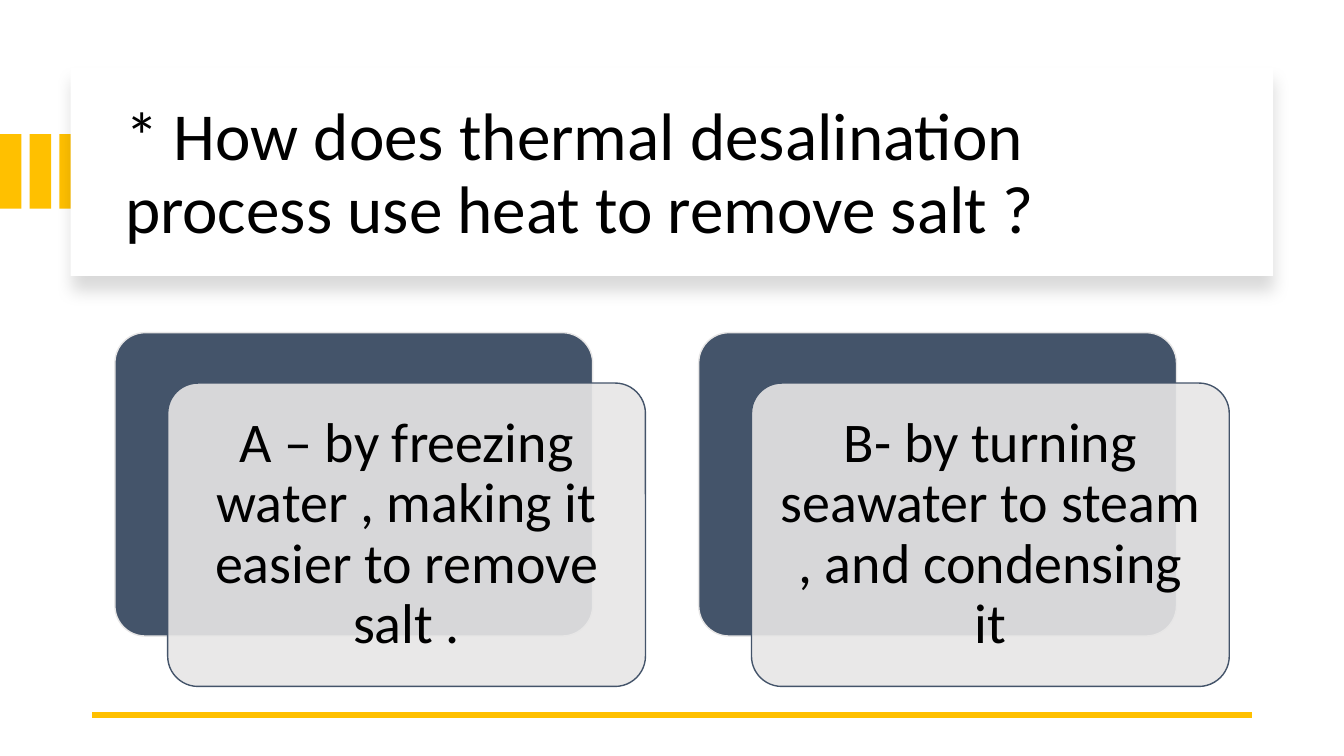
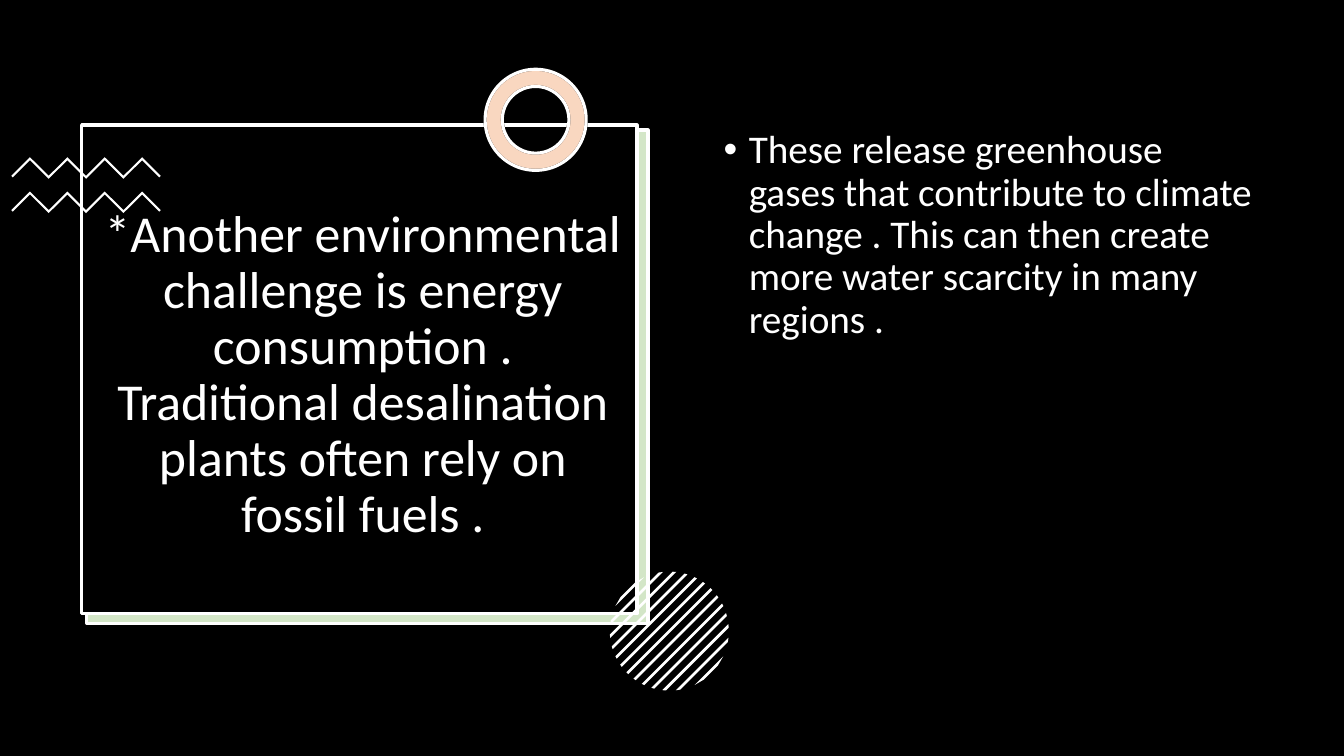
import math
from dataclasses import dataclass
from typing import Any, Optional

import pptx
import pptx.dml.color
import pptx.enum.shapes
import pptx.enum.text
import pptx.oxml.ns
import pptx.oxml.xmlchemy
import pptx.util

Pt = pptx.util.Pt
Preset = pptx.enum.shapes.MSO_SHAPE
Align = pptx.enum.text.PP_ALIGN
Anchor = pptx.enum.text.MSO_ANCHOR

FONT = "Calibri"
BLACK, WHITE = "000000", "FFFFFF"
GOLD, NAVY, GREY = "FFC000", "44546A", "E7E6E6"
GREEN, ORANGE = "70AD47", "ED7D31"
LINE_SPACING = 0.9
TITLE_ONLY = 5


@dataclass(frozen=True)
class Box:
    left: float
    top: float
    width: float
    height: float

    def lengths(self) -> list[int]:
        return [Pt(value) for value in (self.left, self.top, self.width, self.height)]


@dataclass(frozen=True)
class Look:
    fill: str
    line: Optional[str] = None
    line_width: float = 0
    opacity: int = 100


@dataclass(frozen=True)
class TextStyle:
    size: float
    color: str
    align: Any = Align.LEFT
    anchor: Any = Anchor.MIDDLE
    inset_x: float = 7.2
    inset_y: float = 3.6


def color(hex_value: str) -> pptx.dml.color.RGBColor:
    return pptx.dml.color.RGBColor.from_string(hex_value)


def add_child(parent: Any, tag: str, **attributes: Any) -> Any:
    child = pptx.oxml.xmlchemy.OxmlElement(tag)
    for name, value in attributes.items():
        child.set(name, str(value))
    parent.append(child)
    return child


def apply_look(shape: Any, look: Look) -> None:
    shape.shadow.inherit = False
    shape.fill.solid()
    shape.fill.fore_color.rgb = color(look.fill)
    if look.opacity < 100:
        fill_color = shape.element.spPr.find(".//" + pptx.oxml.ns.qn("a:srgbClr"))
        add_child(fill_color, "a:alpha", val=look.opacity * 1000)
    if look.line is None:
        shape.line.fill.background()
    else:
        shape.line.color.rgb = color(look.line)
        shape.line.width = Pt(look.line_width)


def add_preset(slide: Any, preset: Any, box: Box, look: Look,
               adjustment: Optional[float] = None) -> Any:
    shape = slide.shapes.add_shape(preset, *box.lengths())
    if adjustment is not None:
        shape.adjustments[0] = adjustment
    apply_look(shape, look)
    return shape


def add_outline(slide: Any, points: list[tuple[float, float]], look: Look) -> None:
    corners = [(Pt(x), Pt(y)) for x, y in points]
    builder = slide.shapes.build_freeform(*corners[0])
    builder.add_line_segments(corners[1:], close=True)
    apply_look(builder.convert_to_shape(), look)


def write_text(shape: Any, text: str, style: TextStyle) -> Any:
    """Put one formatted paragraph into the shape and return it."""
    frame = shape.text_frame
    frame.text = text
    frame.word_wrap = True
    frame.auto_size = pptx.enum.text.MSO_AUTO_SIZE.NONE
    frame.vertical_anchor = style.anchor
    frame.margin_left = frame.margin_right = Pt(style.inset_x)
    frame.margin_top = frame.margin_bottom = Pt(style.inset_y)
    para = frame.paragraphs[0]
    para.alignment = style.align
    para.line_spacing = LINE_SPACING
    for span in para.runs:
        span.font.name = FONT
        span.font.size = Pt(style.size)
        span.font.color.rgb = color(style.color)
    return para


def set_title(slide: Any, text: str, box: Box, style: TextStyle) -> None:
    """Fill the title placeholder and bring it in front of the shapes so far."""
    title = slide.shapes.title
    title.left, title.top, title.width, title.height = box.lengths()
    write_text(title, text, style)
    title.element.getparent().append(title.element)


def add_soft_shadow(shape: Any) -> None:
    effects = shape.element.spPr.find(pptx.oxml.ns.qn("a:effectLst"))
    shadow = add_child(effects, "a:outerShdw", blurRad=Pt(11), dist=Pt(10),
                       dir=90 * 60000, algn="t", rotWithShape=0)
    add_child(add_child(shadow, "a:srgbClr", val=BLACK), "a:alpha", val=15000)


def add_rule(slide: Any, left: float, right: float, top: float) -> None:
    rule = slide.shapes.add_connector(
        pptx.enum.shapes.MSO_CONNECTOR.STRAIGHT, Pt(right), Pt(top), Pt(left), Pt(top))
    rule.line.color.rgb = color(GOLD)
    rule.line.width = Pt(4.5)
    add_child(rule.element.spPr, "a:effectLst")


def add_answer(slide: Any, left: float, text: str) -> None:
    """Draw a dark card with a translucent text card offset in front of it."""
    back = Box(left, 237.6, 341.3, 216.7)
    front = Box(left + 37.7, back.top + 36, back.width, back.height)
    add_preset(slide, Preset.ROUNDED_RECTANGLE, back, Look(NAVY, GREY, 1), 0.1)
    card = add_preset(slide, Preset.ROUNDED_RECTANGLE, front, Look(GREY, NAVY, 1, 90), 0.1)
    write_text(card, text, TextStyle(40, BLACK, Align.CENTER, inset_x=12, inset_y=12))


def add_zigzag(slide: Any, left: float, top: float) -> None:
    step, rise, thickness, count = 13.35, 13.3, 2.1, 9
    upper = [(left + step * index, top + rise * (1 - index % 2)) for index in range(count)]
    lower = [(x, y + thickness) for x, y in upper[1:-1]]
    (first_x, first_y), (last_x, last_y) = upper[0], upper[-1]
    right_end = (last_x - 1.1, last_y + 1.1)
    left_end = (first_x + 1.1, first_y + 1.1)
    add_outline(slide, [*upper, right_end, *reversed(lower), left_end], Look(WHITE))


def add_striped_disc(slide: Any, center_x: float, center_y: float, radius: float) -> None:
    """Draw parallel diagonal stripes whose ends lie on one circle."""
    gap, half_width, per_side = 6.82, 0.95, 6
    for index in range(-per_side, per_side + 1):
        near, far = (math.acos((index * gap + side) / radius)
                     for side in (-half_width, half_width))
        angles = [math.pi / 4 + turn for turn in (near, far, -far, -near)]
        points = [(center_x + radius * math.cos(angle), center_y + radius * math.sin(angle))
                  for angle in angles]
        add_outline(slide, points, Look(WHITE))


def build_question(deck: Any) -> None:
    slide = deck.slides.add_slide(deck.slide_layouts[TITLE_ONLY])
    for index in range(3):
        add_preset(slide, Preset.RECTANGLE, Box(21.2 * index, 95.8, 15.3, 53.3), Look(GOLD))
    panel = add_preset(slide, Preset.RECTANGLE, Box(50.4, 48.2, 859, 149), Look(WHITE))
    add_soft_shadow(panel)
    set_title(slide, "* How does thermal desalination process use heat to remove salt ?",
              Box(82.1, 64.1, 801.4, 122.4), TextStyle(48, BLACK))
    add_rule(slide, 66, 894, 510.5)
    answers = ("A – by freezing water , making it easier to remove salt .",
               "B- by turning seawater to steam , and condensing it")
    for index, answer in enumerate(answers):
        add_answer(slide, 82.1 + 417 * index, answer)


def build_challenge(deck: Any) -> None:
    slide = deck.slides.add_slide(deck.slide_layouts[TITLE_ONLY])
    slide.background.fill.solid()
    slide.background.fill.fore_color.rgb = color(BLACK)
    panels = (
        (Box(61.2, 93.4, 401, 352.8), Look(WHITE)),
        (Box(61.9, 92.9, 401, 352.8), Look(GREEN, WHITE, 2.25, 30)),
        (Box(58.3, 89.3, 396.7, 349.2), Look(BLACK, WHITE, 2.25)),
    )
    for box, look in panels:
        add_preset(slide, Preset.RECTANGLE, box, look)
    for top in (112.3, 136.8):
        add_zigzag(slide, 8.1, top)
    for look in (Look(WHITE, BLACK, 2.25), Look(ORANGE, WHITE, 2.25, 30)):
        add_preset(slide, Preset.DONUT, Box(346.5, 49.5, 72.2, 72.2), look, 0.17)
    add_striped_disc(slide, 478.1, 450.8, 42.5)
    set_title(slide, "*Another environmental challenge is energy consumption . "
                     "Traditional desalination plants often rely on fossil fuels .",
              Box(66.2, 109.4, 385.9, 318.2), TextStyle(37, WHITE, Align.CENTER))

    body = slide.shapes.add_textbox(*Box(509.8, 89.3, 391.7, 342.7).lengths())
    para = write_text(body, "These release greenhouse gases that contribute to climate change . "
                            "This can then create more water scarcity in many regions .",
                      TextStyle(28, WHITE, anchor=Anchor.TOP))
    para.space_before = Pt(10)
    properties = para._p.get_or_add_pPr()
    properties.set("marL", str(Pt(18)))
    properties.set("indent", str(Pt(-18)))
    add_child(properties, "a:buFont", typeface="Arial")
    add_child(properties, "a:buChar", char="•")


def main() -> None:
    deck = pptx.Presentation()
    deck.slide_width, deck.slide_height = Pt(960), Pt(540)
    build_question(deck)
    build_challenge(deck)
    deck.save("out.pptx")


if __name__ == "__main__":
    main()
